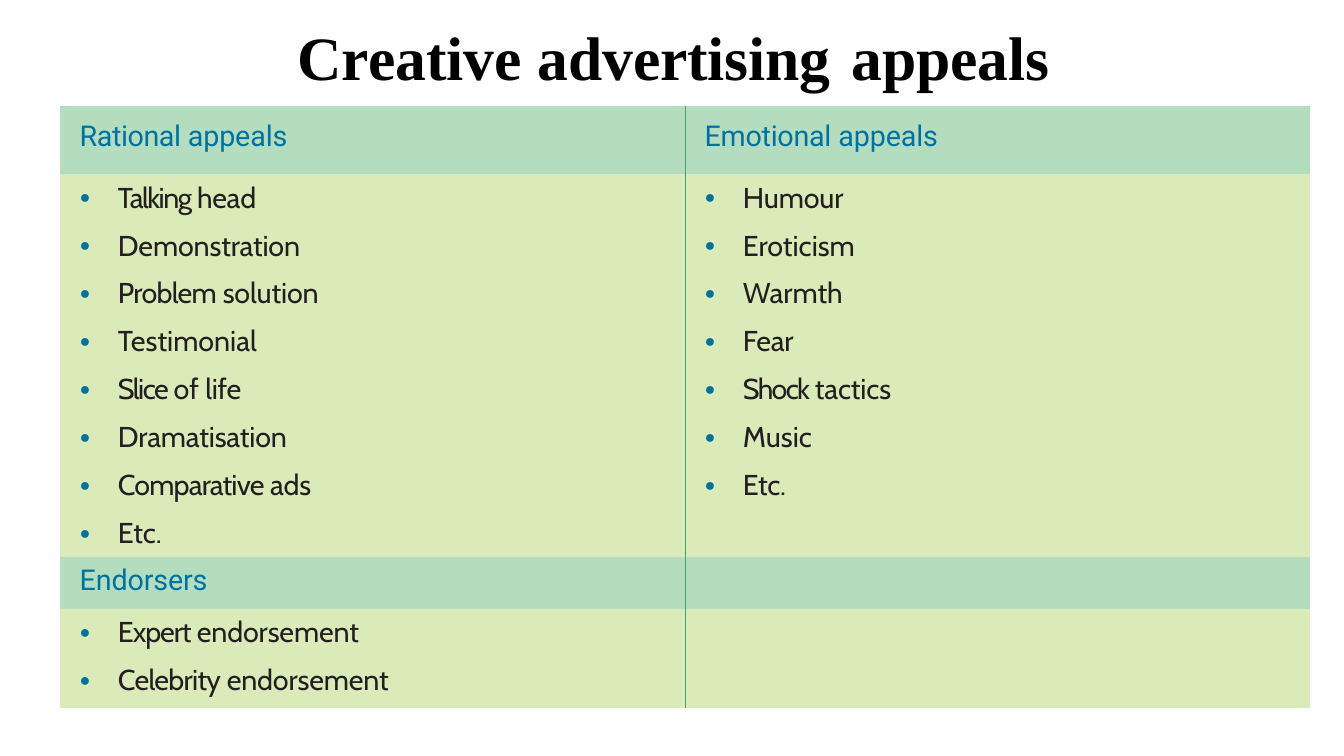
from dataclasses import dataclass
from typing import Any

import pptx
import pptx.dml.color
import pptx.enum.text
import pptx.oxml
import pptx.oxml.ns
import pptx.util

COLORS = {
    "title": "000000", "heading": "0072A1", "body": "231F20",
    "heading_fill": "B4DDC0", "body_fill": "DAEAB8", "divider": "44A26E",
}
COL = ROW = pptx.util.Inches(0.1)  # grid unit
SLIDE_COLS, SLIDE_ROWS = 133.33, 75
TITLE_BOX = (29.4, 1.8, 77, 7.6)
TABLE_LEFT, TABLE_TOP, TABLE_COL = 6, 10.5, 62
HEADING_INDENT, BULLET_INDENT, BULLET_HANG = 1.9, 5.7, -3.8
TITLE_TAB = 54.7
FIRST_GAP, BULLET_GAP = 4, 9.25
NO_STYLE = "{2D5ABB26-0587-4C30-8999-92F81FD0307C}"

TITLE_FONT = {"name": "Times New Roman", "size": pptx.util.Pt(44), "bold": True}
HEADING_FONT = {"name": "Roboto", "size": pptx.util.Pt(20.5)}
BODY_FONT = {"name": "Cabin", "size": pptx.util.Pt(20.5)}


@dataclass(frozen=True)
class Span:
    """Words that share one letter spacing, in points."""
    text: str
    spacing: float = 0


Line = tuple[Span, ...]


@dataclass(frozen=True)
class Band:
    """One table row: a list of lines for each column."""
    rows: float
    cells: tuple[list[Line], list[Line]]
    heading: bool = False
    top: float = 0.6
    gap: float = FIRST_GAP


TITLE: Line = (Span("Creative "), Span("advertising\tappeals", -0.1))
BANDS = [
    Band(6.8, (
        [(Span("Rational ", -0.3), Span("appeals", -0.1))],
        [(Span("Emotional ", -0.2), Span("appeals", -0.1))],
    ), heading=True, top=1.4, gap=10.2),
    Band(38, (
        [
            (Span("Talking ", -1.1), Span("head", -0.2)),
            (Span("Demonstration", -0.1),),
            (Span("Problem ", -0.5), Span("solution", -0.1)),
            (Span("Testimonial"),),
            (Span("Slice ", -1.1), Span("of "), Span("life", -0.2)),
            (Span("Dramatisation", -0.1),),
            (Span("Comparative ", -0.6), Span("ads", -0.2)),
            (Span("Etc."),),
        ],
        [
            (Span("Humour", -0.1),),
            (Span("Eroticism"),),
            (Span("Warmth"),),
            (Span("Fear", -0.2),),
            (Span("Shock ", -1.2), Span("tactics", -0.1)),
            (Span("Music"),),
            (Span("Etc.", -0.2),),
        ],
    )),
    Band(5.1, ([(Span("Endorsers", -0.1),)], []), heading=True),
    Band(9.8, (
        [
            (Span("Expert ", -0.8), Span("endorsement", -0.1)),
            (Span("Celebrity ", -0.5), Span("endorsement", -0.1)),
        ],
        [],
    )),
]


def cols(n: float) -> int:
    return round(n * COL)


def rows(n: float) -> int:
    return round(n * ROW)


def rgb(key: str) -> pptx.dml.color.RGBColor:
    return pptx.dml.color.RGBColor.from_string(COLORS[key])


def set_all(target: Any, values: dict[str, Any]) -> None:
    for name, value in values.items():
        setattr(target, name, value)


def elements(body: str) -> list[Any]:
    """Parse sibling elements that use the a: prefix."""
    return list(pptx.oxml.parse_xml(f"<a:x {pptx.oxml.ns.nsdecls('a')}>{body}</a:x>"))


def write_line(p: Any, line: Line, font: dict[str, Any], color: str, gap: float) -> None:
    p.space_before = pptx.util.Pt(gap)
    for span in line:
        r = p.add_run()
        r.text = span.text
        set_all(r.font, font)
        r.font.color.rgb = rgb(color)
        r.font._element.set("spc", str(round(span.spacing * 100)))


def indent(p: Any, left: float, hang: float = 0) -> Any:
    ppr = p._p.get_or_add_pPr()
    ppr.set("marL", str(cols(left)))
    ppr.set("indent", str(cols(hang)))
    return ppr


def add_bullet(p: Any) -> None:
    indent(p, BULLET_INDENT, BULLET_HANG).extend(elements(
        f'<a:buClr><a:srgbClr val="{COLORS["heading"]}"/></a:buClr>'
        '<a:buSzPct val="63000"/><a:buFont typeface="Times New Roman"/>'
        '<a:buChar char="●"/>'))


def add_title(slide: Any) -> None:
    sp = slide.shapes.title
    left, top, width, height = TITLE_BOX
    set_all(sp, {"left": cols(left), "top": rows(top),
                 "width": cols(width), "height": rows(height)})
    tf = sp.text_frame
    set_all(tf, {
        "margin_left": 0, "margin_right": 0, "margin_top": rows(0.1), "margin_bottom": 0,
        "word_wrap": True, "vertical_anchor": pptx.enum.text.MSO_ANCHOR.TOP,
        "auto_size": pptx.enum.text.MSO_AUTO_SIZE.SHAPE_TO_FIT_TEXT,
    })
    p = tf.paragraphs[0]
    p.alignment = pptx.enum.text.PP_ALIGN.LEFT
    write_line(p, TITLE, TITLE_FONT, "title", 1)
    indent(p, 0.1).extend(elements(
        f'<a:tabLst><a:tab pos="{cols(TITLE_TAB)}" algn="l"/></a:tabLst>'))


def add_divider(cell: Any, side: str) -> None:
    line, = elements(f'<a:ln{side} w="{pptx.util.Pt(1.5)}"><a:solidFill>'
                     f'<a:srgbClr val="{COLORS["divider"]}"/></a:solidFill></a:ln{side}>')
    cell._tc.get_or_add_tcPr().insert(0, line)


def fill_cell(cell: Any, band: Band, lines: list[Line]) -> None:
    set_all(cell, {"margin_left": 0, "margin_right": 0,
                   "margin_top": rows(band.top), "margin_bottom": 0})
    kind = "heading" if band.heading else "body"
    font = HEADING_FONT if band.heading else BODY_FONT
    cell.fill.solid()
    cell.fill.fore_color.rgb = rgb(f"{kind}_fill")
    tf = cell.text_frame
    for i, line in enumerate(lines):
        p = tf.add_paragraph() if i else tf.paragraphs[0]
        write_line(p, line, font, kind, BULLET_GAP if i else band.gap)
        if band.heading:
            indent(p, HEADING_INDENT)
        else:
            add_bullet(p)


def add_appeals_table(slide: Any) -> None:
    height = sum(band.rows for band in BANDS)
    frame = slide.shapes.add_table(len(BANDS), 2, cols(TABLE_LEFT), rows(TABLE_TOP),
                                   cols(2 * TABLE_COL), rows(height))
    table = frame.table
    set_all(table, {"first_row": False, "horz_banding": False})
    for style in frame._element.iter(pptx.oxml.ns.qn("a:tableStyleId")):
        style.text = NO_STYLE
    for column in table.columns:
        column.width = cols(TABLE_COL)
    for i, band in enumerate(BANDS):
        table.rows[i].height = rows(band.rows)
        for j, side in enumerate("RL"):
            cell = table.cell(i, j)
            fill_cell(cell, band, band.cells[j])
            add_divider(cell, side)


def main() -> None:
    prs = pptx.Presentation()
    set_all(prs, {"slide_width": cols(SLIDE_COLS), "slide_height": rows(SLIDE_ROWS)})
    slide = prs.slides.add_slide(prs.slide_layouts.get_by_name("Title Only"))
    add_title(slide)
    add_appeals_table(slide)
    prs.save("out.pptx")


if __name__ == "__main__":
    main()
